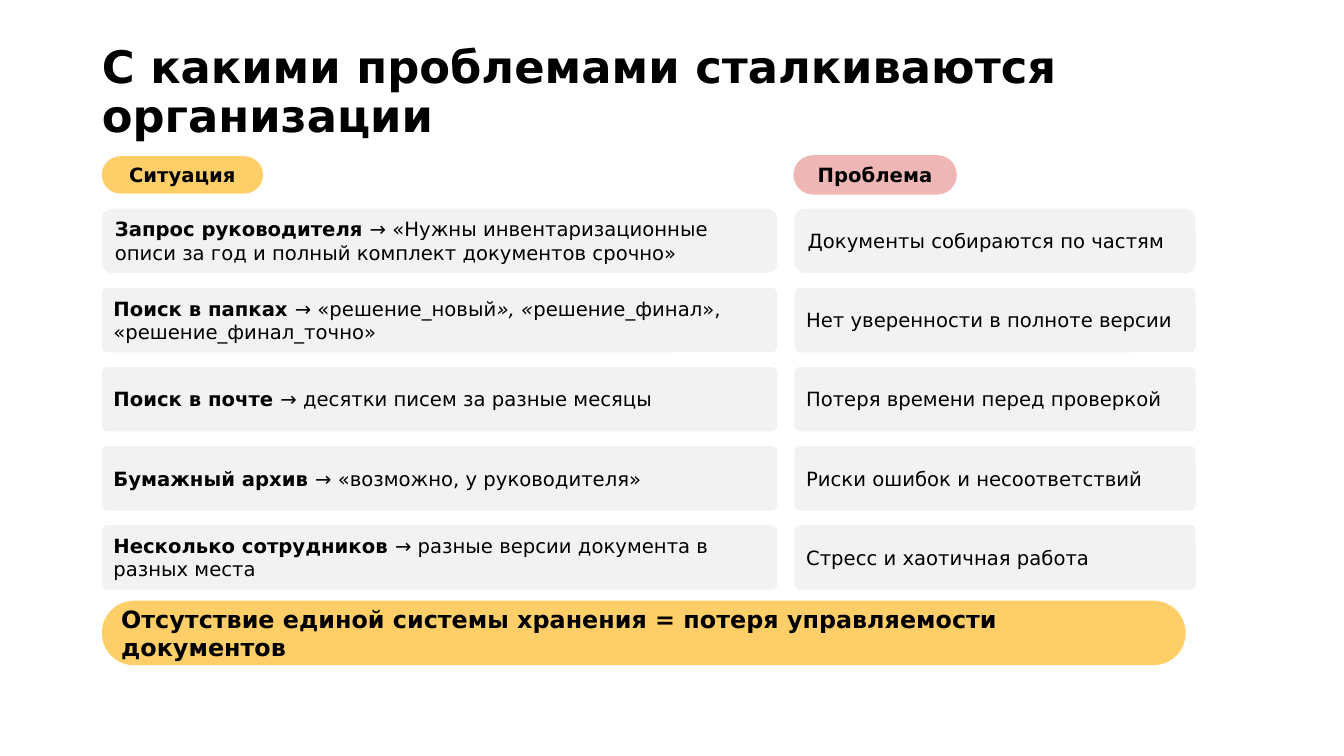
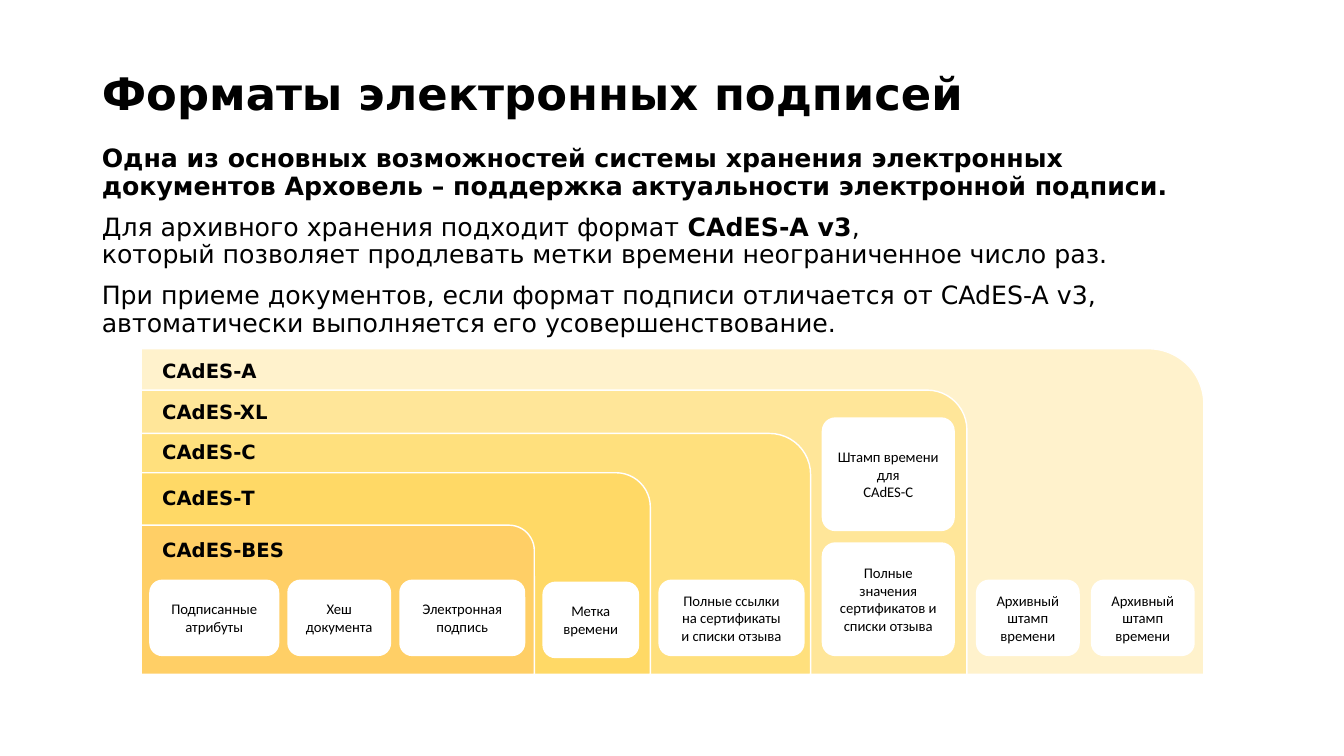
"""Build two slides: document storage problems and electronic signature formats."""
from pptx import Presentation
from pptx.dml.color import RGBColor
from pptx.enum.shapes import MSO_SHAPE as SHAPE
from pptx.enum.text import MSO_ANCHOR as ANCHOR, PP_ALIGN as ALIGN
from pptx.util import Pt

PX = 9144
SLIDE_SIZE = 1333, 750
SANS, CARD_FONT = "DejaVu Sans", "Calibri"
BLACK = RGBColor(0x00, 0x00, 0x00)
WHITE = RGBColor(0xFF, 0xFF, 0xFF)
GRAY = RGBColor(0xF2, 0xF2, 0xF2)
AMBER = RGBColor(0xFE, 0xCF, 0x68)
PINK = RGBColor(0xEF, 0xB6, 0xB6)
LEVEL_A = RGBColor(0xFF, 0xF2, 0xCC)
LEVEL_XL = RGBColor(0xFF, 0xE6, 0x99)
LEVEL_C = RGBColor(0xFF, 0xE0, 0x7D)
LEVEL_T = RGBColor(0xFF, 0xD9, 0x66)
LEVEL_BES = RGBColor(0xFF, 0xCF, 0x66)

PLAIN, BOLD, ITALIC = "plain", "bold", "italic"

PROBLEMS_TITLE = "С какими проблемами сталкиваются организации"
COLUMNS = [("Ситуация", 101, 670, AMBER, None), ("Проблема", 788, 398, PINK, PINK)]
ROWS = [
    ([("Запрос руководителя ", BOLD),
      ("→ «Нужны инвентаризационные описи за год и полный комплект документов срочно»", PLAIN)],
     "Документы собираются по частям"),
    ([("Поиск в папках ", BOLD), ("→ «решение_новый", PLAIN), ("», «", ITALIC),
      ("решение_финал», «решение_финал_точно»", PLAIN)],
     "Нет уверенности в полноте версии"),
    ([("Поиск в почте ", BOLD), ("→ десятки писем за разные месяцы", PLAIN)],
     "Потеря времени перед проверкой"),
    ([("Бумажный архив ", BOLD), ("→ «возможно, у руководителя»", PLAIN)],
     "Риски ошибок и несоответствий"),
    ([("Несколько сотрудников ", BOLD), ("→ разные версии документа в разных места", PLAIN)],
     "Стресс и хаотичная работа"),
]
ROW_TOP, ROW_PITCH, ROW_HEIGHT = 207, 78.5, 64
CONCLUSION = "Отсутствие единой системы хранения = потеря управляемости документов"

FORMATS_TITLE = "Форматы электронных подписей"
FORMATS_TEXT = [
    [("Одна из основных возможностей системы хранения электронных документов Арховель – "
      "поддержка актуальности электронной подписи.", BOLD)],
    [("Для архивного хранения подходит формат ", PLAIN), ("CAdES-A v3", BOLD),
     (",\nкоторый позволяет продлевать метки времени неограниченное число раз.", PLAIN)],
    [("При приеме документов, если формат подписи отличается от CAdES-A v3, "
      "автоматически выполняется его усовершенствование.", PLAIN)],
]
LEVEL_LEFT, LEVEL_BOTTOM = 140, 669
LEVELS = [
    ("CAdES-А", 346, 1054, 0.17, LEVEL_A, 351),
    ("CAdES-XL", 387, 819, 0.14, LEVEL_XL, 392),
    ("CAdES-C", 430, 664, 0.17, LEVEL_C, 432),
    ("CAdES-Т", 469, 505, 0.17, LEVEL_T, 477),
    ("CAdES-BES", 521, 390, 0.17, LEVEL_BES, 529),
]
LOW_CARD, TALL_CARD = (76, 0.17), (113, 0.12)
CARDS = [
    ("Подписанные атрибуты", 148, 575, 129, LOW_CARD),
    ("Хеш документа", 285, 575, 103, LOW_CARD),
    ("Электронная подпись", 396, 575, 125, LOW_CARD),
    ("Метка времени", 538, 577, 96, LOW_CARD),
    ("Полные ссылки\nна сертификаты\nи списки отзыва", 653, 575, 145, LOW_CARD),
    ("Архивный штамп времени", 968, 575, 103, LOW_CARD),
    ("Архивный штамп времени", 1082, 575, 103, LOW_CARD),
    ("Штамп времени\nдля\nCAdES-C", 815, 414, 132, TALL_CARD),
    ("Полные значения сертификатов и списки отзыва", 815, 538, 132, TALL_CARD),
]


def emu(*lengths):
    return [round(length * PX) for length in lengths]


def write(box, paragraphs, size, name=SANS, bold=False, align=ALIGN.LEFT,
          anchor=ANCHOR.MIDDLE, spacing=None, before=0):
    frame = box.text_frame
    frame.word_wrap = True
    frame.vertical_anchor = anchor
    for index, spans in enumerate(paragraphs):
        para = frame.add_paragraph() if index else frame.paragraphs[0]
        para.alignment = align
        if spacing:
            para.line_spacing = spacing
        if index and before:
            para.space_before = Pt(before)
        font = para.font
        font.size, font.name, font.bold = Pt(size), name, bold
        font.color.rgb = BLACK
        for text, style in [(spans, PLAIN)] if isinstance(spans, str) else spans:
            for number, line in enumerate(text.split("\n")):
                if number:
                    para.add_line_break()
                span = para.add_run()
                span.text = line
                if style == BOLD:
                    span.font.bold = True
                elif style == ITALIC:
                    span.font.italic = True


def add_block(page, bounds, fill, radius, line=None, line_width=1, kind=SHAPE.ROUNDED_RECTANGLE):
    block = page.shapes.add_shape(kind, *emu(*bounds))
    block.shadow.inherit = False
    block.adjustments[0] = radius
    block.fill.solid()
    block.fill.fore_color.rgb = fill
    if line is None:
        block.line.fill.background()
    else:
        block.line.color.rgb = line
        block.line.width = Pt(line_width)
    return block


def add_text(page, bounds, paragraphs, size, inset=None, **style):
    box = page.shapes.add_textbox(*emu(*bounds))
    if inset is not None:
        frame = box.text_frame
        frame.margin_left = frame.margin_right = frame.margin_top = frame.margin_bottom = inset * PX
    write(box, paragraphs, size, **style)


def add_page(deck, title, top, height):
    page = deck.slides.add_slide(deck.slide_layouts[6])
    add_text(page, (97, top, 1137, height), [title], 32, inset=4, bold=True,
             anchor=ANCHOR.BOTTOM, spacing=0.9)
    return page


def build_problems(deck):
    page = add_page(deck, PROBLEMS_TITLE, 49, 96)
    for column, (heading, left, width, fill, line) in enumerate(COLUMNS):
        pill = add_block(page, (left, 155, 160, 37), fill, 0.5, line, 1.5)
        write(pill, [heading], 14, bold=True, align=ALIGN.CENTER)
        for index, row in enumerate(ROWS):
            top = ROW_TOP + index * ROW_PITCH
            radius = 0.09 if index else 0.17
            cell = add_block(page, (left, top, width, ROW_HEIGHT), GRAY, radius)
            write(cell, [row[column]], 14)
    banner = add_block(page, (101, 596, 1075, 64), AMBER, 0.5)
    write(banner, [CONCLUSION], 17, bold=True)


def build_formats(deck):
    page = add_page(deck, FORMATS_TITLE, 69, 54)
    add_text(page, (97, 141, 1137, 202), FORMATS_TEXT, 18, inset=4,
             anchor=ANCHOR.TOP, spacing=0.9, before=10)
    for label, top, width, radius, fill, label_top in LEVELS:
        add_block(page, (LEVEL_LEFT, top, width, LEVEL_BOTTOM - top), fill, radius, WHITE,
                  kind=SHAPE.ROUND_1_RECTANGLE)
        add_text(page, (151, label_top, 158, 34), [label], 14, bold=True, anchor=ANCHOR.TOP)
    for text, left, top, width, (height, radius) in CARDS:
        card = add_block(page, (left, top, width, height), WHITE, radius)
        write(card, [text], 10.5, name=CARD_FONT, align=ALIGN.CENTER)


def main():
    deck = Presentation()
    deck.slide_width, deck.slide_height = emu(*SLIDE_SIZE)
    build_problems(deck)
    build_formats(deck)
    deck.save("out.pptx")


if __name__ == "__main__":
    main()
